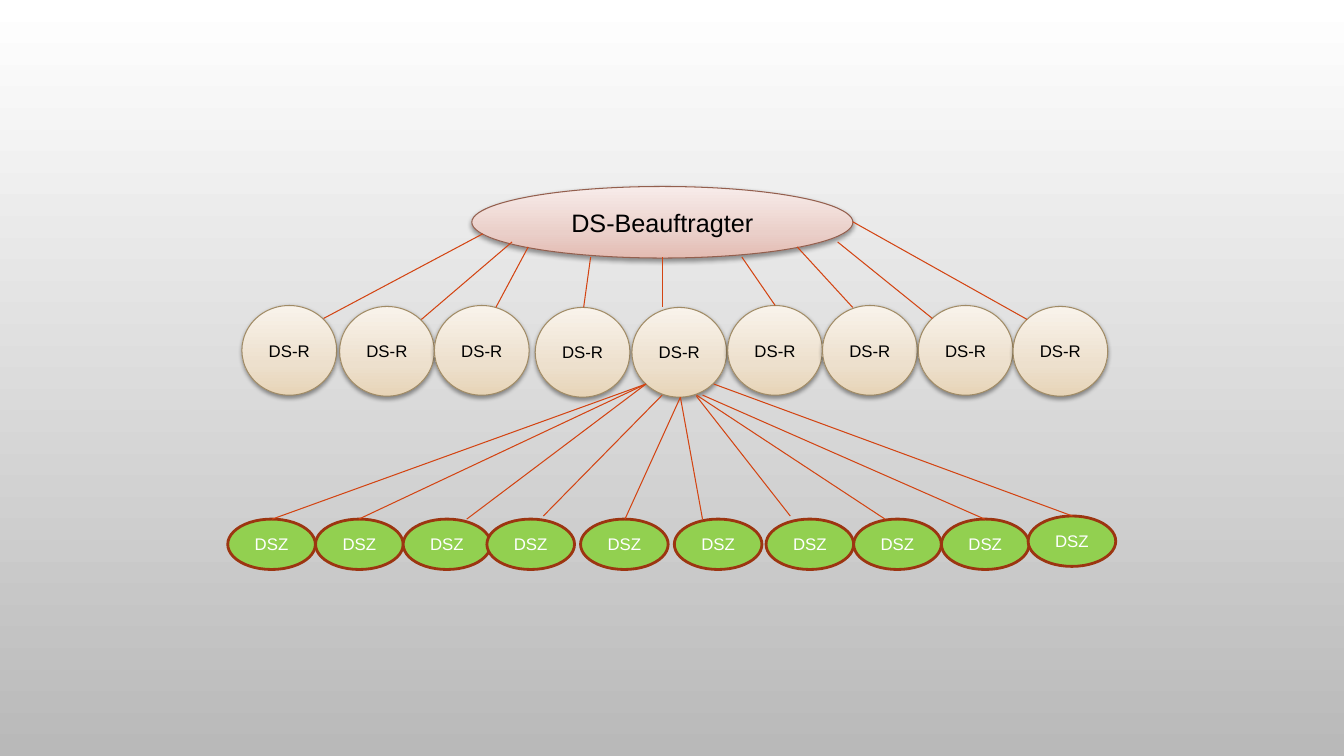
from copy import deepcopy

from lxml import etree
from pptx import Presentation
from pptx import util as u
from pptx.dml import color
from pptx.enum import shapes, text
from pptx.oxml import ns

OFFICER = {"label": "DS-Beauftragter", "size": (272.2, 51.1), "font": (18, "000000"),
           "kind": shapes.MSO_SHAPE.OVAL, "line": ("935F4E", 0.75),
           "stops": [(0, "E3BBB2"), (0.35, "EACFC9"), (1, "F8ECEA")]}
CONSULTANT = {"label": "DS-R", "size": (67.7, 64.1), "font": (12, "000000"),
              "kind": shapes.MSO_SHAPE.FLOWCHART_CONNECTOR, "line": ("A08B66", 0.75),
              "stops": [(0, "E7D4B7"), (0.35, "EDE0CD"), (1, "F9F3EB")]}
CENTRE = {"label": "DSZ", "size": (62.6, 36), "font": (12, "FFFFFF"),
          "kind": shapes.MSO_SHAPE.FLOWCHART_CONNECTOR, "line": ("9C3511", 2),
          "fill": "92D050"}

CONSULTANT_SPOTS = [(0, 0), (69.8, 0.7), (137.5, 0), (209.5, 1.4), (278.6, 1.4),
                    (347, 0), (414.7, 0), (483.1, 0), (550.8, 0.7)]
CENTRE_SPOTS = [(0, 2.2), (62.7, 2.2), (125.3, 2.2), (185.1, 2.2), (252, 2.2),
                (319, 2.2), (384.5, 2.2), (447.1, 2.2), (509.8, 2.2), (571.7, 0)]
OFFICER_LINKS = [
    ((114.9, 9), (1.1, 69.5)), ((135.8, 14.8), (71, 70.2)), ((147.3, 18.4), (124.2, 61.6)),
    ((191.9, 25.6), (186.9, 61.6)), ((243, 25.6), (243, 61.6)), ((299.9, 25.6), (323.7, 60.2)),
    ((339.5, 18.4), (379.1, 61.6)), ((368.3, 14.8), (436, 69.5)), ((379.1, 0.4), (503.7, 70.2))]
CENTRE_LINKS = [
    ((267.5, 0.3), (0.4, 96.8)), ((267.5, 0.3), (62.3, 96.8)), ((267.5, 0.3), (139.4, 96.8)),
    ((279, 8.2), (194.1, 94.6)), ((292, 9.7), (252.4, 96.8)), ((292, 9.7), (307.8, 96.8)),
    ((303.5, 9), (370.5, 94.6)), ((303.5, 8.2), (438.2, 96.8)), ((307.8, 8.2), (509.4, 96.8)),
    ((315.8, 0.3), (572.1, 94.6))]


def rgb(value):
    """Turn a hex string into a colour."""
    return color.RGBColor.from_string(value)


def set_gradient(fill, owner, stops, angle):
    """Give a fill the listed gradient stops at an anticlockwise angle."""
    fill.gradient()
    fill.gradient_angle = angle
    stop_list = next(owner.iter(ns.qn("a:gsLst")))
    while len(stop_list) < len(stops):
        stop_list.append(deepcopy(stop_list[0]))
    for stop, (position, value) in zip(fill.gradient_stops, stops):
        stop.position = position
        stop.color.rgb = rgb(value)


def add_shadow(shape):
    """Cast a soft shadow straight down from a shape."""
    effects = shape.element.spPr.find(ns.qn("a:effectLst"))
    shadow = etree.SubElement(effects, ns.qn("a:outerShdw"), blurRad=str(u.Pt(3.1)),
                              dist=str(u.Pt(1.6)), dir="5400000", rotWithShape="0")
    black = etree.SubElement(shadow, ns.qn("a:srgbClr"), val="000000")
    etree.SubElement(black, ns.qn("a:alpha"), val="38000")


def write_label(shape, label, size, value):
    """Write a centred label inside a shape."""
    frame = shape.text_frame
    layout = {"margin_left": 0, "margin_right": 0, "margin_top": 0, "margin_bottom": 0,
              "word_wrap": True, "vertical_anchor": text.MSO_ANCHOR.MIDDLE}
    for name, setting in layout.items():
        setattr(frame, name, setting)
    paragraph = frame.paragraphs[0]
    paragraph.alignment = text.PP_ALIGN.CENTER
    run = paragraph.add_run()
    run.text = label
    for name, setting in {"name": "Arial", "size": u.Pt(size)}.items():
        setattr(run.font, name, setting)
    run.font.color.rgb = rgb(value)


def draw_level(slide, box, role, spots):
    """Draw one level of the hierarchy at spots relative to its box."""
    left, top = box
    for x, y in spots:
        member = slide.shapes.add_shape(
            role["kind"], *map(u.Pt, (left + x, top + y, *role["size"])))
        member.shadow.inherit = False
        outline, weight = role["line"]
        member.line.color.rgb = rgb(outline)
        member.line.width = u.Pt(weight)
        if "stops" in role:
            set_gradient(member.fill, member.element, role["stops"], 90)
            add_shadow(member)
        else:
            member.fill.solid()
            member.fill.fore_color.rgb = rgb(role["fill"])
        write_label(member, role["label"], *role["font"])


def draw_links(slide, box, links):
    """Draw the lines between two levels relative to their box."""
    left, top = box
    for (x1, y1), (x2, y2) in links:
        link = slide.shapes.add_connector(
            shapes.MSO_CONNECTOR.STRAIGHT,
            *map(u.Pt, (left + x1, top + y1, left + x2, top + y2)))
        link.line.color.rgb = rgb("D34412")
        link.line.width = u.Pt(0.75)
        etree.SubElement(link.element.spPr, ns.qn("a:effectLst"))


def main():
    """Build the data protection hierarchy slide."""
    deck = Presentation()
    deck.slide_width, deck.slide_height = u.Pt(960), u.Pt(540)
    slide = deck.slides.add_slide(deck.slide_layouts[6])
    set_gradient(slide.background.fill, slide.element, [(0, "FFFFFF"), (1, "B9B9B9")], 270)
    draw_level(slide, (337, 133.2), OFFICER, [(0, 0)])
    draw_level(slide, (172.8, 218.2), CONSULTANT, CONSULTANT_SPOTS)
    draw_links(slide, (230, 158), OFFICER_LINKS)
    draw_level(slide, (162.7, 368.6), CENTRE, CENTRE_SPOTS)
    draw_links(slide, (194, 274), CENTRE_LINKS)
    deck.save("out.pptx")


if __name__ == "__main__":
    main()
